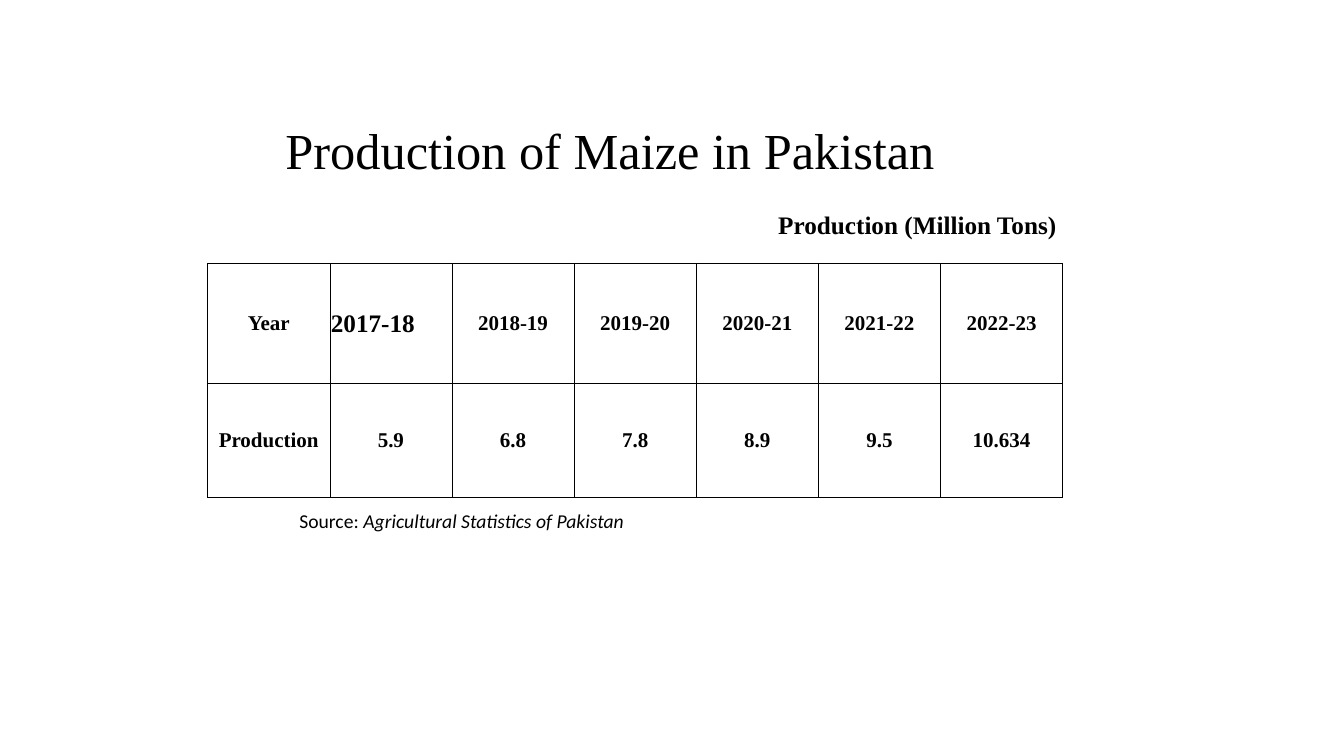
from dataclasses import dataclass

from lxml.etree import SubElement
from pptx import Presentation
from pptx.dml.color import RGBColor
from pptx.enum.text import MSO_ANCHOR as Anchor, PP_ALIGN as Align
from pptx.oxml.ns import qn
from pptx.util import Inches, Pt


@dataclass(frozen=True)
class Theme:
    ink: str = "000000"
    serif: str = "Times New Roman"
    sans: str = "Calibri"
    title_size: int = 36
    label_size: int = 18
    cell_size: int = 15
    source_size: int = 14
    border: float = 0.5


class SlideBuilder:
    def __init__(self, slide, theme):
        self.slide = slide
        self.theme = theme

    def style(self, run, size, face, bold=False, italic=False):
        font = run.font
        font.size, font.name = Pt(size), face
        font.bold, font.italic = bold, italic
        font.color.rgb = RGBColor.from_string(self.theme.ink)

    def title(self, wording, left, top, width, height, indent):
        heading = self.slide.shapes.title
        heading.left, heading.top = Inches(left), Inches(top)
        heading.width, heading.height = Inches(width), Inches(height)
        frame = heading.text_frame
        frame.text = wording
        frame.margin_left = Inches(indent)
        frame.vertical_anchor = Anchor.MIDDLE
        paragraph = frame.paragraphs[0]
        paragraph.alignment = Align.LEFT
        paragraph.line_spacing = 0.9
        self.style(paragraph.runs[0], self.theme.title_size, self.theme.serif)

    def text(self, pieces, left, top, width, height, size, face,
             align=Align.LEFT, anchor=Anchor.TOP):
        box = self.slide.shapes.add_textbox(
            Inches(left), Inches(top), Inches(width), Inches(height))
        frame = box.text_frame
        frame.word_wrap = True
        frame.vertical_anchor = anchor
        paragraph = frame.paragraphs[0]
        paragraph.alignment = align
        for wording, bold, italic in pieces:
            run = paragraph.add_run()
            run.text = wording
            self.style(run, size, face, bold, italic)

    def border(self, cell):
        properties = cell._tc.get_or_add_tcPr()
        for position, side in enumerate(("lnL", "lnR", "lnT", "lnB")):
            line = SubElement(properties, qn(f"a:{side}"), w=str(Pt(self.theme.border)))
            fill = SubElement(line, qn("a:solidFill"))
            SubElement(fill, qn("a:srgbClr"), val=self.theme.ink)
            properties.insert(position, line)

    def cell(self, cell, wording, size, align):
        cell.text = wording
        cell.vertical_anchor = Anchor.MIDDLE
        cell.margin_left = cell.margin_right = cell.margin_top = Inches(0.01)
        cell.margin_bottom = 0
        cell.fill.background()
        self.border(cell)
        paragraph = cell.text_frame.paragraphs[0]
        paragraph.alignment = align
        self.style(paragraph.runs[0], size, self.theme.serif, bold=True)

    def table(self, rows, left, top, width, heights, emphasized):
        table = self.slide.shapes.add_table(
            len(rows), len(rows[0]), Inches(left), Inches(top),
            Inches(width), Inches(sum(heights))).table
        table.first_row = table.horz_banding = False
        for column in table.columns:
            column.width = Inches(width / len(rows[0]))
        for row, height, values in zip(table.rows, heights, rows):
            row.height = Inches(height)
            for cell, value in zip(row.cells, values):
                if value == emphasized:
                    self.cell(cell, value, self.theme.label_size, Align.LEFT)
                else:
                    self.cell(cell, value, self.theme.cell_size, Align.CENTER)


def main():
    theme = Theme()
    deck = Presentation()
    deck.slide_width, deck.slide_height = Inches(13.33), Inches(7.5)
    builder = SlideBuilder(deck.slides.add_slide(deck.slide_layouts[5]), theme)

    builder.title("Production of Maize in Pakistan", 2.1, 0.79, 9.91, 1.45, indent=0.73)
    production = (
        ("Year", "2017-18", "2018-19", "2019-20", "2020-21", "2021-22", "2022-23"),
        ("Production", "5.9", "6.8", "7.8", "8.9", "9.5", "10.634"),
    )
    builder.table(production, 2.06, 2.61, 8.48, (1.19, 1.13), emphasized="2017-18")
    builder.text([("Production (Million Tons)", True, False)],
                 7.62, 2.03, 5.71, 0.42, theme.label_size, theme.serif)
    builder.text([("Source: ", False, False),
                  ("Agricultural Statistics of Pakistan", False, True)],
                 2.1, 4.93, 4.96, 0.48, theme.source_size, theme.sans,
                 Align.CENTER, Anchor.MIDDLE)
    deck.save("out.pptx")


if __name__ == "__main__":
    main()
